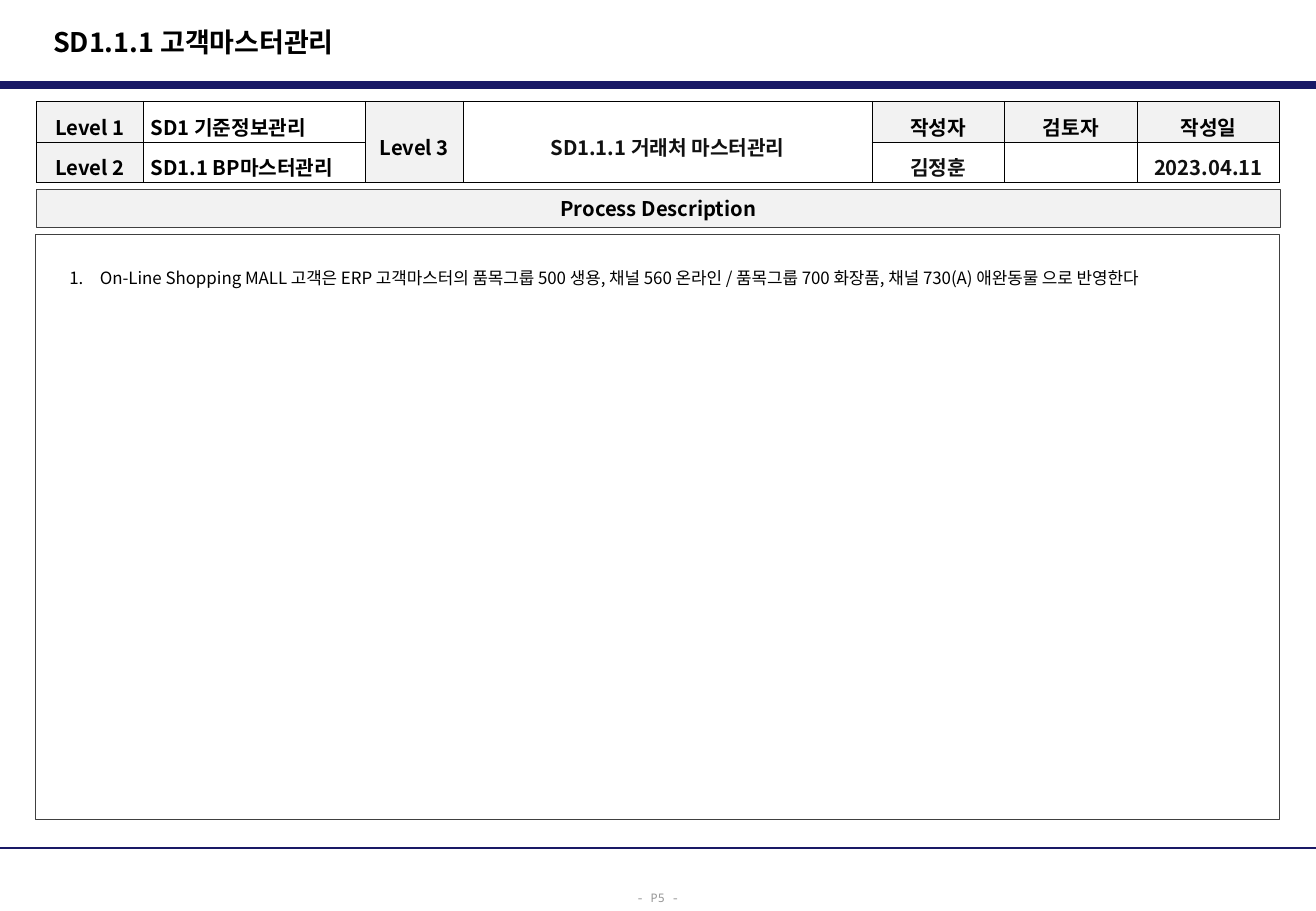
from lxml import etree
from pptx import Presentation
from pptx.dml.color import RGBColor
from pptx.enum.shapes import MSO_CONNECTOR, MSO_SHAPE
from pptx.enum.text import MSO_ANCHOR, PP_ALIGN
from pptx.oxml.ns import qn
from pptx.util import Cm, Pt

STRAIGHT = MSO_CONNECTOR.STRAIGHT
RECTANGLE = MSO_SHAPE.RECTANGLE
TOP, MIDDLE = MSO_ANCHOR.TOP, MSO_ANCHOR.MIDDLE
LEFT, CENTER = PP_ALIGN.LEFT, PP_ALIGN.CENTER

NAVY = RGBColor(0x19, 0x19, 0x66)
BLACK = RGBColor(0x00, 0x00, 0x00)
SOFT_BLACK = RGBColor(0x11, 0x11, 0x11)
DARK_GRAY = RGBColor(0x40, 0x40, 0x40)
MID_GRAY = RGBColor(0x96, 0x96, 0x96)
LIGHT_GRAY = RGBColor(0xF2, 0xF2, 0xF2)

SANS = "Noto Sans CJK KR"
MONO = "Noto Sans Mono"

PAGE_WIDTH, PAGE_HEIGHT = 27.51, 19.05
COLUMN_WIDTHS = [2.24, 4.64, 2.04, 8.55, 2.77, 2.77, 2.98]
ROW_HEIGHT = 0.85
# row, column, text, alignment, colour, fill
CELLS = [
    (0, 0, "Level 1", CENTER, BLACK, LIGHT_GRAY),
    (0, 1, "SD1 기준정보관리", LEFT, BLACK, None),
    (0, 2, "Level 3", CENTER, BLACK, LIGHT_GRAY),
    (0, 3, "SD1.1.1 거래처 마스터관리", CENTER, SOFT_BLACK, None),
    (0, 4, "작성자", CENTER, BLACK, LIGHT_GRAY),
    (0, 5, "검토자", CENTER, BLACK, LIGHT_GRAY),
    (0, 6, "작성일", CENTER, BLACK, LIGHT_GRAY),
    (1, 0, "Level 2", CENTER, BLACK, LIGHT_GRAY),
    (1, 1, "SD1.1 BP마스터관리", LEFT, BLACK, None),
    (1, 4, "김정훈", CENTER, SOFT_BLACK, None),
    (1, 6, "2023.04.11", CENTER, SOFT_BLACK, None),
]
MERGED_COLUMNS = (2, 3)


def add_span(para, text, size, color=BLACK, bold=False, typeface=SANS):
    span = para.add_run()
    span.text = text
    font = span.font
    font.size, font.bold, font.name = Pt(size), bold, typeface
    font.color.rgb = color
    east_asian = etree.Element(qn("a:ea"), typeface=typeface)
    font._element.find(qn("a:latin")).addnext(east_asian)


def add_rule(page, y, weight):
    """Draw a navy line across the whole page."""
    rule = page.shapes.add_connector(STRAIGHT, 0, Cm(y), Cm(PAGE_WIDTH), Cm(y))
    rule.line.color.rgb = NAVY
    rule.line.width = Pt(weight)
    etree.SubElement(rule._element.spPr, qn("a:effectLst"))


def add_text(page, left, top, width, height, wrap):
    """Add an empty text box and return its first paragraph."""
    box = page.shapes.add_textbox(Cm(left), Cm(top), Cm(width), Cm(height))
    box.text_frame.word_wrap = wrap
    box.text_frame.vertical_anchor = MIDDLE if wrap else TOP
    return box.text_frame.paragraphs[0]


def add_panel(page, left, top, width, height, fill=None):
    """Add a thinly outlined rectangle and return its text frame."""
    panel = page.shapes.add_shape(RECTANGLE, Cm(left), Cm(top), Cm(width), Cm(height))
    panel.shadow.inherit = False
    paint(panel, fill)
    panel.line.color.rgb = DARK_GRAY
    panel.line.width = Pt(0.5)
    panel.text_frame.word_wrap = True
    return panel.text_frame


def paint(target, color):
    if color is None:
        target.fill.background()
    else:
        target.fill.solid()
        target.fill.fore_color.rgb = color


def set_borders(cell):
    properties = cell._tc.get_or_add_tcPr()
    for index, side in enumerate(("a:lnL", "a:lnR", "a:lnT", "a:lnB")):
        border = etree.Element(qn(side), w=str(Pt(0.5)))
        solid = etree.SubElement(border, qn("a:solidFill"))
        etree.SubElement(solid, qn("a:srgbClr"), val=str(BLACK))
        properties.insert(index, border)


def number_paragraph(para, indent):
    properties = para._p.get_or_add_pPr()
    properties.set("marL", str(Cm(indent)))
    properties.set("indent", str(-Cm(indent)))
    etree.SubElement(properties, qn("a:buFont"), typeface=SANS)
    etree.SubElement(properties, qn("a:buAutoNum"), type="arabicPeriod")


def add_process_table(page):
    frame = page.shapes.add_table(2, len(COLUMN_WIDTHS), Cm(0.76), Cm(2.12),
                                  Cm(sum(COLUMN_WIDTHS)), Cm(2 * ROW_HEIGHT))
    table = frame.table
    table.first_row = table.horz_banding = False
    for column, width in zip(table.columns, COLUMN_WIDTHS):
        column.width = Cm(width)
    for row in table.rows:
        row.height = Cm(ROW_HEIGHT)
    for cell in table.iter_cells():
        cell.margin_left = cell.margin_right = Cm(0.15)
        cell.margin_top = cell.margin_bottom = Cm(0.03)
        cell.vertical_anchor = MIDDLE
        paint(cell, None)
        set_borders(cell)
    for column in MERGED_COLUMNS:
        table.cell(0, column).merge(table.cell(1, column))
    for row, column, text, alignment, color, fill in CELLS:
        cell = table.cell(row, column)
        paint(cell, fill)
        para = cell.text_frame.paragraphs[0]
        para.alignment = alignment
        para.line_spacing = 1.3
        add_span(para, text, 12, color, bold=True)


def add_description(page):
    heading = add_panel(page, 0.76, 3.96, 26.01, 0.8, LIGHT_GRAY)
    heading.vertical_anchor = MIDDLE
    para = heading.paragraphs[0]
    para.alignment = CENTER
    add_span(para, "Process Description", 12, bold=True)

    body = add_panel(page, 0.74, 4.9, 26.01, 12.23)
    body.vertical_anchor = TOP
    body.margin_left, body.margin_top = Cm(0.71), Cm(0.61)
    para = body.paragraphs[0]
    para.alignment = LEFT
    para.line_spacing = 1.2
    number_paragraph(para, 0.64)
    add_span(para, "On-Line Shopping MALL 고객은 ERP 고객마스터의 품목그룹 500 생용, "
                   "채널 560 온라인 / 품목그룹 700 화장품, 채널 730(A) 애완동물 으로 반영한다", 10)


def main():
    deck = Presentation()
    deck.slide_width, deck.slide_height = Cm(PAGE_WIDTH), Cm(PAGE_HEIGHT)
    page = deck.slides.add_slide(deck.slide_layouts[6])

    add_rule(page, 1.78, 4.5)
    add_rule(page, 17.73, 1.5)
    footer = add_text(page, 13.06, 18.42, 1.42, 0.64, wrap=False)
    footer.line_spacing = 1.3
    add_span(footer, "- P5 -", 7, MID_GRAY, typeface=MONO)
    title = add_text(page, 0.86, 0.38, 18.06, 0.97, wrap=True)
    add_span(title, "SD1.1.1 고객마스터관리", 16, bold=True)

    add_description(page)
    add_process_table(page)
    deck.save("out.pptx")


if __name__ == "__main__":
    main()
